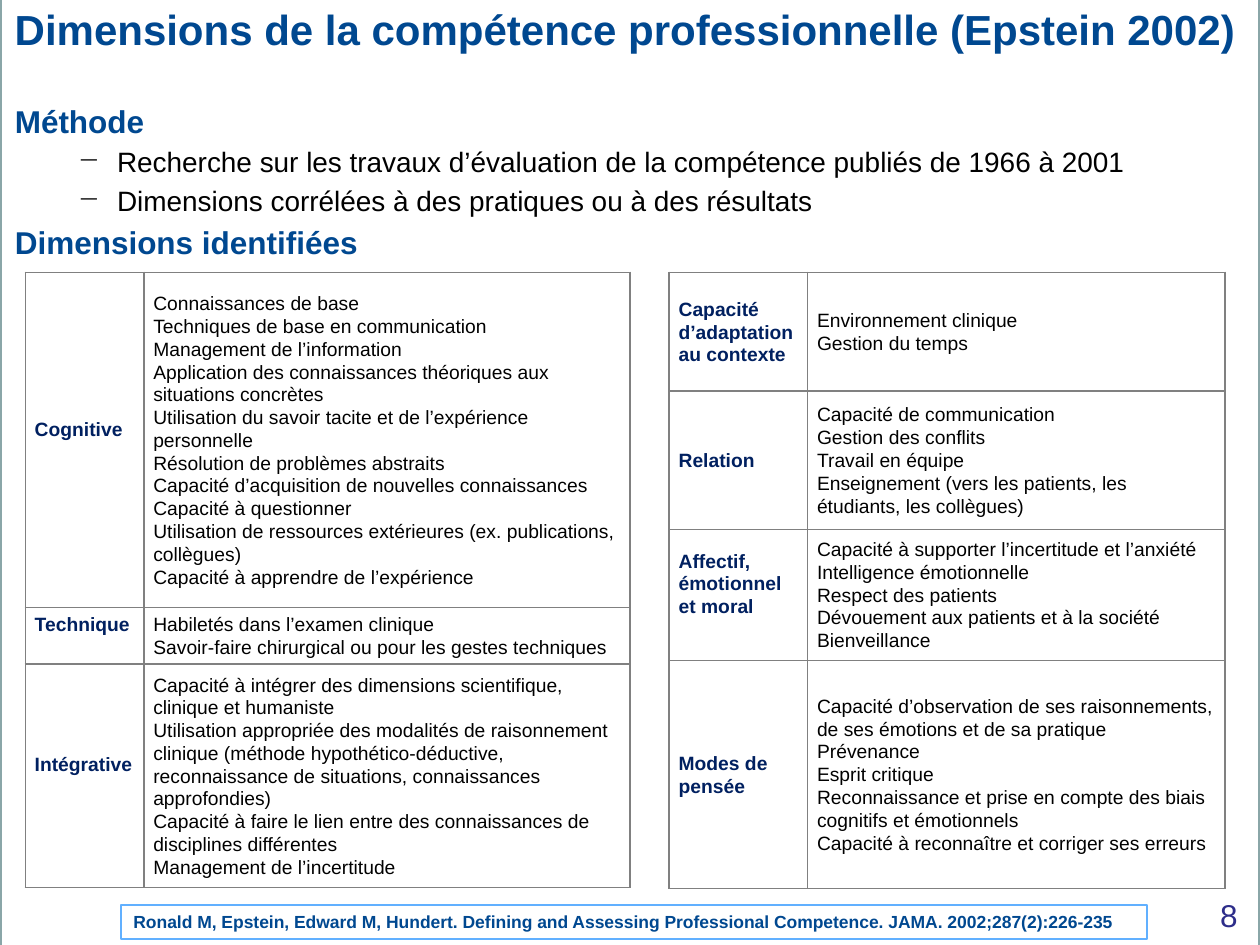
import pptx
import pptx.dml.color
import pptx.enum.shapes
import pptx.enum.text
import pptx.oxml
import pptx.oxml.ns
import pptx.util
from pptx.util import Cm, Pt

BLUE, NAVY, BLACK, WHITE = "004890", "002060", "000000", "FFFFFF"
ALIGN = pptx.enum.text.PP_ALIGN
MIDDLE = pptx.enum.text.MSO_ANCHOR.MIDDLE
LINE_HEIGHT = Pt(13)


def color(value):
    return pptx.dml.color.RGBColor.from_string(value)


class SlideBuilder:
    font_name = "Arial"
    border_color = "808080"

    def __init__(self, slide):
        self.slide = slide

    def format(self, paragraph, size, text_color, bold=False, align=ALIGN.LEFT):
        paragraph.alignment = align
        font = paragraph.font
        font.name, font.size, font.bold = self.font_name, Pt(size), bold
        font.color.rgb = color(text_color)

    def title(self, text, left, top, width, height):
        shape = self.slide.shapes.title
        shape.left, shape.top = Cm(left), Cm(top)
        shape.width, shape.height = Cm(width), Cm(height)
        frame = shape.text_frame
        frame.text = text
        frame.word_wrap = True
        frame.auto_size = pptx.enum.text.MSO_AUTO_SIZE.NONE
        frame.vertical_anchor = MIDDLE
        self.format(frame.paragraphs[0], 24, BLUE, True, ALIGN.CENTER)

    def rectangle(self, left, top, width, height, line, line_width):
        shape = self.slide.shapes.add_shape(
            pptx.enum.shapes.MSO_SHAPE.RECTANGLE,
            Cm(left), Cm(top), Cm(width), Cm(height))
        shape.shadow.inherit = False
        shape.fill.solid()
        shape.fill.fore_color.rgb = color(WHITE)
        shape.line.color.rgb = color(line)
        shape.line.width = Pt(line_width)
        return shape

    def frame(self, *box):
        shape = self.rectangle(*box, "8AA6A8", 2)
        self.slide.shapes._spTree.insert(2, shape._element)  # send to back

    def citation(self, text, *box):
        text_frame = self.rectangle(*box, "61B0FF", 1.25).text_frame
        text_frame.text = text
        text_frame.word_wrap = True
        text_frame.vertical_anchor = MIDDLE
        self.format(text_frame.paragraphs[0], 10, BLUE, True)

    def text_box(self, left, top, width, height):
        shape = self.slide.shapes.add_textbox(Cm(left), Cm(top), Cm(width), Cm(height))
        shape.text_frame.word_wrap = True
        return shape.text_frame

    def page_number(self, text, *box):
        paragraph = self.text_box(*box).paragraphs[0]
        paragraph.text = text
        self.format(paragraph, 18, "2D2D8A", align=ALIGN.RIGHT)

    def outline(self, entries, *box):
        text_frame = self.text_box(*box)
        for index, (level, text) in enumerate(entries):
            paragraph = text_frame.paragraphs[0] if index == 0 else text_frame.add_paragraph()
            paragraph.text = text
            paragraph.level = level
            if index:
                paragraph.space_before = Pt(3)
            if level:
                properties = paragraph._p.get_or_add_pPr()
                properties.set("marL", str(Cm(2.06)))
                properties.set("indent", str(Cm(-0.79)))
                properties.append(pptx.oxml.parse_xml(
                    f'<a:buChar {pptx.oxml.ns.nsdecls("a")} char="−"/>'))
                self.format(paragraph, 16, BLACK)
            else:
                self.format(paragraph, 18, BLUE, True)

    def cell(self, cell, lines, text_color, bold, raised=False):
        cell.margin_left = cell.margin_right = Cm(0.19)
        cell.margin_top = 0
        cell.margin_bottom = LINE_HEIGHT if raised else 0
        cell.vertical_anchor = MIDDLE
        cell.text_frame.text = "\n".join(lines)
        for paragraph in cell.text_frame.paragraphs:
            paragraph.line_spacing = LINE_HEIGHT
            self.format(paragraph, 11, text_color, bold)
        properties = cell._tc.get_or_add_tcPr()
        for side in "LRTB":
            properties.append(pptx.oxml.parse_xml(
                f'<a:ln{side} {pptx.oxml.ns.nsdecls("a")} w="{Pt(1)}"><a:solidFill>'
                f'<a:srgbClr val="{self.border_color}"/></a:solidFill></a:ln{side}>'))
        cell.fill.background()

    def table(self, left, top, widths, rows):
        """Each row is (height, label, label raised by one line, lines)."""
        heights = [row[0] for row in rows]
        table = self.slide.shapes.add_table(
            len(rows), len(widths), Cm(left), Cm(top),
            Cm(sum(widths)), Cm(sum(heights))).table
        table.first_row = table.horz_banding = False
        for column, width in zip(table.columns, widths):
            column.width = Cm(width)
        for index, (height, label, raised, lines) in enumerate(rows):
            table.rows[index].height = Cm(height)
            self.cell(table.cell(index, 0), [label], NAVY, True, raised)
            self.cell(table.cell(index, 1), lines, BLACK, False)


OUTLINE = [
    (0, "Méthode"),
    (1, "Recherche sur les travaux d’évaluation de la compétence publiés de 1966 à 2001"),
    (1, "Dimensions corrélées à des pratiques ou à des résultats"),
    (0, "Dimensions identifiées"),
]
LEFT_ROWS = [
    (6.76, "Cognitive", True, [
        "Connaissances de base",
        "Techniques de base en communication",
        "Management de l’information",
        "Application des connaissances théoriques aux situations concrètes",
        "Utilisation du savoir tacite et de l’expérience personnelle",
        "Résolution de problèmes abstraits",
        "Capacité d’acquisition de nouvelles connaissances",
        "Capacité à questionner",
        "Utilisation de ressources extérieures (ex. publications, collègues)",
        "Capacité à apprendre de l’expérience"]),
    (1.14, "Technique", True, [
        "Habiletés dans l’examen clinique",
        "Savoir-faire chirurgical ou pour les gestes techniques"]),
    (4.5, "Intégrative", True, [
        "Capacité à intégrer des dimensions scientifique, clinique et humaniste",
        "Utilisation appropriée des modalités de raisonnement clinique (méthode "
        "hypothético-déductive, reconnaissance de situations, connaissances approfondies)",
        "Capacité à faire le lien entre des connaissances de disciplines différentes",
        "Management de l’incertitude"]),
]
RIGHT_ROWS = [
    (2.39, "Capacité d’adaptation au contexte", False, [
        "Environnement clinique",
        "Gestion du temps"]),
    (2.79, "Relation", False, [
        "Capacité de communication",
        "Gestion des conflits",
        "Travail en équipe",
        "Enseignement (vers les patients, les étudiants, les collègues)"]),
    (2.64, "Affectif, émotionnel et moral", True, [
        "Capacité à supporter l’incertitude et l’anxiété",
        "Intelligence émotionnelle",
        "Respect des patients",
        "Dévouement aux patients et à la société",
        "Bienveillance"]),
    (4.6, "Modes de pensée", False, [
        "Capacité d’observation de ses raisonnements, de ses émotions et de sa pratique",
        "Prévenance",
        "Esprit critique",
        "Reconnaissance et prise en compte des biais cognitifs et émotionnels",
        "Capacité à reconnaître et corriger ses erreurs"]),
]


def main():
    presentation = pptx.Presentation()
    presentation.slide_width, presentation.slide_height = Cm(25.4), Cm(19.05)
    builder = SlideBuilder(presentation.slides.add_slide(presentation.slide_layouts[5]))

    # Frame and title
    builder.frame(0, -0.86, 25.4, 19.99)
    builder.title("Dimensions de la compétence professionnelle (Epstein 2002)",
                  0, -0.28, 25.2, 1.73)

    # Tables of dimensions
    builder.table(0.51, 5.49, [2.39, 9.8], LEFT_ROWS)
    builder.table(13.49, 5.49, [2.79, 8.41], RIGHT_ROWS)

    # Citation and page number
    builder.citation("Ronald M, Epstein, Edward M, Hundert. Defining and Assessing "
                     "Professional Competence. JAMA. 2002;287(2):226-235",
                     2.44, 18.24, 20.68, 0.69)
    builder.page_number("8", 23.9, 17.93, 1.3, 1.12)

    # Method and heading of the tables
    builder.outline(OUTLINE, 0.05, 1.93, 23.8, 13.61)

    presentation.save("out.pptx")


if __name__ == "__main__":
    main()
